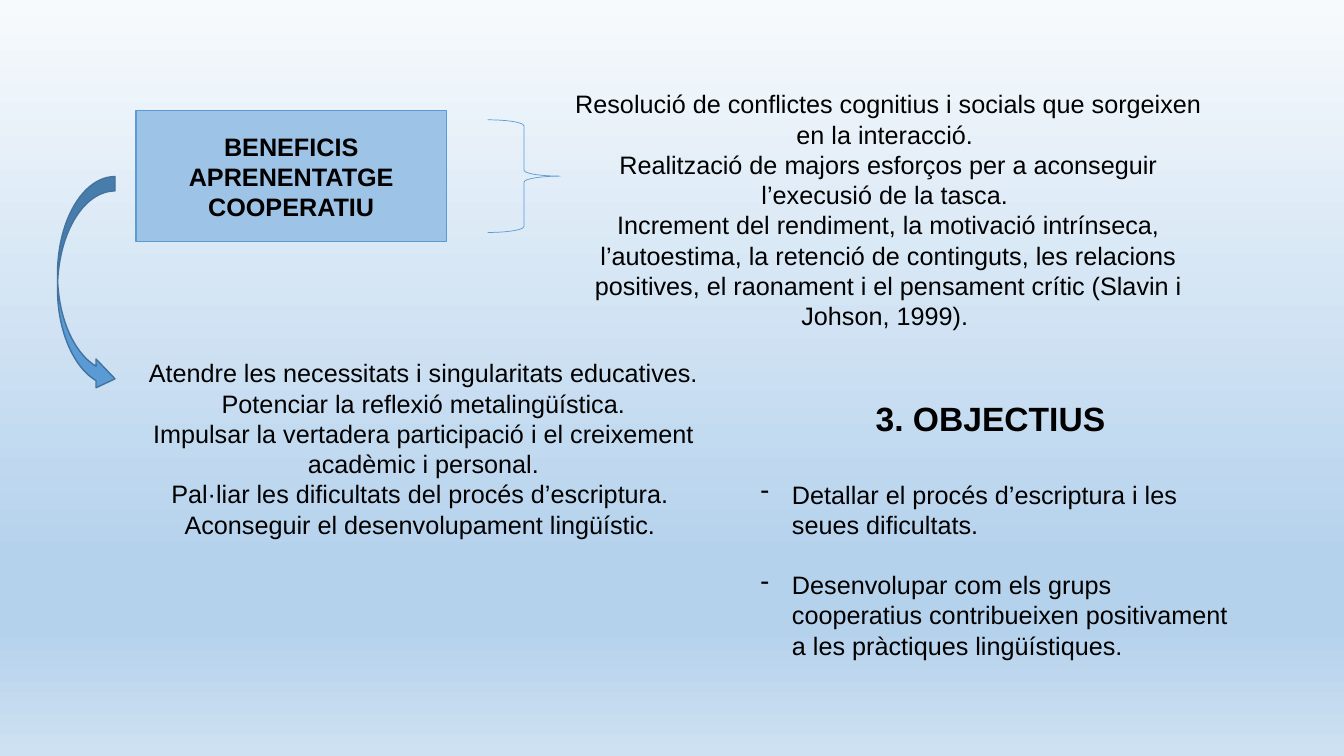
import copy

import pptx
import pptx.dml.color
import pptx.enum.shapes
import pptx.enum.text
import pptx.oxml
import pptx.oxml.ns
import pptx.util

Cm, Pt = pptx.util.Cm, pptx.util.Pt
RGB = pptx.dml.color.RGBColor.from_string
SHAPE = pptx.enum.shapes.MSO_SHAPE
ALIGN = pptx.enum.text.PP_ALIGN
ANCHOR = pptx.enum.text.MSO_ANCHOR
qn = pptx.oxml.ns.qn

COLORS = {"text": "000000", "box": "9DC3E6", "blue": "5B9BD5", "edge": "43739E"}
BACKGROUND = [(0, "F7FAFD"), (0.74, "B5D2EC"), (0.83, "B5D2EC"), (1, "CEE1F2")]
LEADING = 1.2


def add_paragraph(tf, text, size=18, bold=False, align=ALIGN.CENTER, after=0):
    p = tf.paragraphs[0] if not tf.text else tf.add_paragraph()
    for name, value in {"alignment": align, "line_spacing": Pt(size * LEADING),
                        "space_after": Pt(after)}.items():
        setattr(p, name, value)
    r = p.add_run()
    r.text = text
    for name, value in {"name": "Arial", "size": Pt(size), "bold": bold}.items():
        setattr(r.font, name, value)
    r.font.color.rgb = RGB(COLORS["text"])
    return p


def add_text_box(s, left, top, width, height):
    tf = s.shapes.add_textbox(Cm(left), Cm(top), Cm(width), Cm(height)).text_frame
    tf.word_wrap = True
    return tf


prs = pptx.Presentation()
prs.slide_width, prs.slide_height = Cm(33.87), Cm(19.05)
s = prs.slides.add_slide(prs.slide_layouts[6])

# Background gradient, top to bottom
fill = s.background.fill
fill.gradient()
fill.gradient_angle = 270
stops = next(s.element.iter(qn("a:gsLst")))
while len(stops) < len(BACKGROUND):
    stops.append(copy.deepcopy(stops[0]))
for stop, (position, color) in zip(fill.gradient_stops, BACKGROUND):
    stop.position = position
    stop.color.rgb = RGB(color)

# Topic box, brace and curved arrow
shapes = {}
for name, kind, place, color, edge, weight in [
    ("topic", SHAPE.RECTANGLE, (3.43, 2.79, 7.82, 3.3), "box", "blue", 1),
    ("brace", SHAPE.RIGHT_BRACE, (12.29, 3.02, 1.83, 2.84), None, "blue", 0.5),
    ("arrow", SHAPE.CURVED_RIGHT_ARROW, (1.45, 4.45, 1.45, 5.46), "blue", "edge", 1),
]:
    sp = s.shapes.add_shape(kind, *map(Cm, place))
    sp.shadow.inherit = False
    if color:
        sp.fill.solid()
        sp.fill.fore_color.rgb = RGB(COLORS[color])
    else:
        sp.fill.background()
    sp.line.color.rgb = RGB(COLORS[edge])
    sp.line.width = Pt(weight)
    shapes[name] = sp
shapes["arrow"].adjustments[2] = 0.33

tf = shapes["topic"].text_frame
tf.word_wrap = True
tf.vertical_anchor = ANCHOR.MIDDLE
add_paragraph(tf, "BENEFICIS APRENENTATGE COOPERATIU", bold=True)

# Benefits beside and below the topic
for place, lines in [
    ((14.22, 2.11, 16.33, 6.4), [
        "Resolució de conflictes cognitius i socials que sorgeixen en la interacció. ",
        "Realització de majors esforços per a aconseguir l’execusió de la tasca. ",
        "Increment del rendiment, la motivació intrínseca, l’autoestima, la retenció "
        "de continguts, les relacions positives, el raonament i el pensament crític "
        "(Slavin i Johson, 1999). ",
    ]),
    ((2.9, 8.89, 15.54, 5.64), [
        "Atendre les necessitats i singularitats educatives.",
        "Potenciar la reflexió metalingüística.",
        "Impulsar la vertadera participació i el creixement acadèmic i personal.",
        "Pal·liar les dificultats del procés d’escriptura. ",
        "Aconseguir el desenvolupament lingüístic. ",
    ]),
]:
    tf = add_text_box(s, *place)
    for line in lines:
        add_paragraph(tf, line)

# Objectives
tf = add_text_box(s, 18.92, 9.91, 12.32, 6.93)
add_paragraph(tf, "3. OBJECTIUS ", size=24, bold=True, after=24 * LEADING)
for text, after in [
    ("Detallar el procés d’escriptura i les seues dificultats.", 18 * LEADING),
    ("Desenvolupar com els grups cooperatius contribueixen positivament "
     "a les pràctiques lingüístiques.", 0),
]:
    p = add_paragraph(tf, text, align=ALIGN.LEFT, after=after)
    pPr = p._p.get_or_add_pPr()
    pPr.set("marL", str(Cm(0.79)))
    pPr.set("indent", str(-Cm(0.79)))
    pPr.append(pptx.oxml.parse_xml(
        '<a:buChar xmlns:a="http://schemas.openxmlformats.org/drawingml/2006/main" char="-"/>'))

prs.save("out.pptx")
